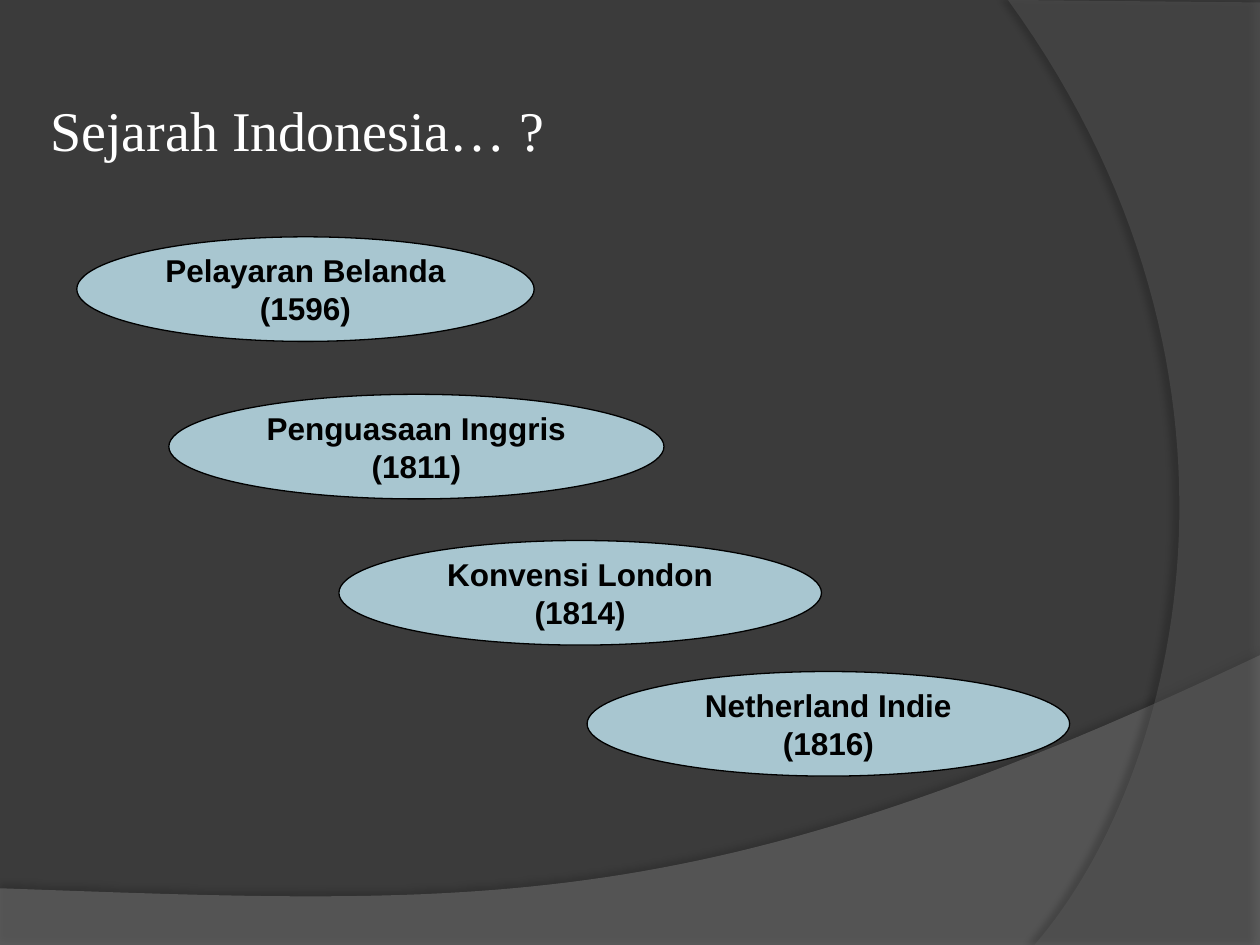
from lxml import etree
from pptx import Presentation
from pptx import util as u
from pptx.dml.color import RGBColor
from pptx.enum import shapes, text
from pptx.oxml.ns import qn

WIDTH, HEIGHT = 10, 7.5
BACKGROUND = RGBColor(0x3B, 0x3B, 0x3B)
WAVE_GREY = RGBColor(0x7F, 0x7F, 0x7F)
ARC_GREY = RGBColor(0x5E, 0x5E, 0x5E)
PALE_BLUE = RGBColor(0xA8, 0xC6, 0xD0)
BLACK = RGBColor(0, 0, 0)
WHITE = RGBColor(0xFF, 0xFF, 0xFF)

TITLE = "Sejarah Indonesia… ?"
# event, year, left, top, width
EVENTS = [
    ("Pelayaran Belanda", "(1596)", 0.61, 1.88, 3.63),
    ("Penguasaan Inggris", "(1811)", 1.34, 3.13, 3.93),
    ("Konvensi London", "(1814)", 2.69, 4.29, 3.83),
    ("Netherland Indie", "(1816)", 4.66, 5.33, 3.83),
]
OVAL_HEIGHT = 0.83

# corners, then the four control points of the curved edge
BANDS = [
    dict(corners=[(0, 7.05), (0, 7.51), (10, 7.51)],
         curve=[(10, 5.2), (5.59, 7.29), (3.91, 7.19), (0, 7.05)],
         color=WAVE_GREY, opacity=45,
         shadow=dict(opacity=35, blur=4, distance=3.5, angle=270)),
    dict(corners=[(10, 0.02), (10, 7.5)],
         curve=[(8.21, 7.5), (9.35, 6.19), (10.18, 3), (8, 0)],
         color=ARC_GREY, opacity=40,
         shadow=dict(opacity=45, blur=4, distance=4, angle=180)),
]


def bezier(controls, steps=60):
    """Points along a cubic curve, both ends included."""
    points = []
    for step in range(steps + 1):
        t = step / steps
        weights = ((1 - t) ** 3, 3 * t * (1 - t) ** 2, 3 * t * t * (1 - t), t ** 3)
        points.append(tuple(sum(w * c[axis] for w, c in zip(weights, controls))
                            for axis in (0, 1)))
    return points


def set_opacity(color_element, percent):
    etree.SubElement(color_element, qn("a:alpha"), val=str(percent * 1000))


def add_shadow(shape, opacity, blur, distance, angle):
    shape.shadow.inherit = False
    effects = shape._element.spPr.find(qn("a:effectLst"))
    outer = etree.SubElement(
        effects, qn("a:outerShdw"), blurRad=str(u.Pt(blur)), dist=str(u.Pt(distance)),
        dir=str(angle * 60000), algn="ctr", rotWithShape="0")
    set_opacity(etree.SubElement(outer, qn("a:srgbClr"), val=str(BLACK)), opacity)


def add_band(page, corners, curve, color, opacity, shadow):
    points = [(u.Inches(x), u.Inches(y)) for x, y in corners + bezier(curve)]
    builder = page.shapes.build_freeform(*points[0])
    builder.add_line_segments(points[1:], close=True)
    band = builder.convert_to_shape()
    band.fill.solid()
    band.fill.fore_color.rgb = color
    set_opacity(band._element.spPr.find(qn("a:solidFill"))[0], opacity)
    band.line.fill.background()
    add_shadow(band, **shadow)


def add_title(page):
    box = page.shapes.add_textbox(*map(u.Inches, (0.3, 0.71, 4.29, 0.64)))
    box.text_frame.word_wrap = False
    box.text_frame.auto_size = text.MSO_AUTO_SIZE.SHAPE_TO_FIT_TEXT
    para = box.text_frame.paragraphs[0]
    para.text = TITLE
    para.font.name = "Times New Roman"
    para.font.size = u.Pt(32)
    para.font.color.rgb = WHITE


def add_event(page, event, year, left, top, width):
    oval = page.shapes.add_shape(
        shapes.MSO_SHAPE.OVAL, *map(u.Inches, (left, top, width, OVAL_HEIGHT)))
    oval.shadow.inherit = False
    oval.fill.solid()
    oval.fill.fore_color.rgb = PALE_BLUE
    oval.line.color.rgb = BLACK
    oval.line.width = u.Pt(0.75)
    frame = oval.text_frame
    frame.vertical_anchor = text.MSO_ANCHOR.MIDDLE
    frame.text = f"{event}\n{year}"
    for para in frame.paragraphs:
        para.alignment = text.PP_ALIGN.CENTER
        para.font.name = "Arial"
        para.font.size = u.Pt(18)
        para.font.bold = True
        para.font.color.rgb = BLACK


def main():
    deck = Presentation()
    deck.slide_width, deck.slide_height = u.Inches(WIDTH), u.Inches(HEIGHT)
    page = deck.slides.add_slide(deck.slide_layouts[6])
    page.background.fill.solid()
    page.background.fill.fore_color.rgb = BACKGROUND
    for band in BANDS:
        add_band(page, **band)
    add_title(page)
    for event in EVENTS:
        add_event(page, *event)
    deck.save("out.pptx")


if __name__ == "__main__":
    main()
